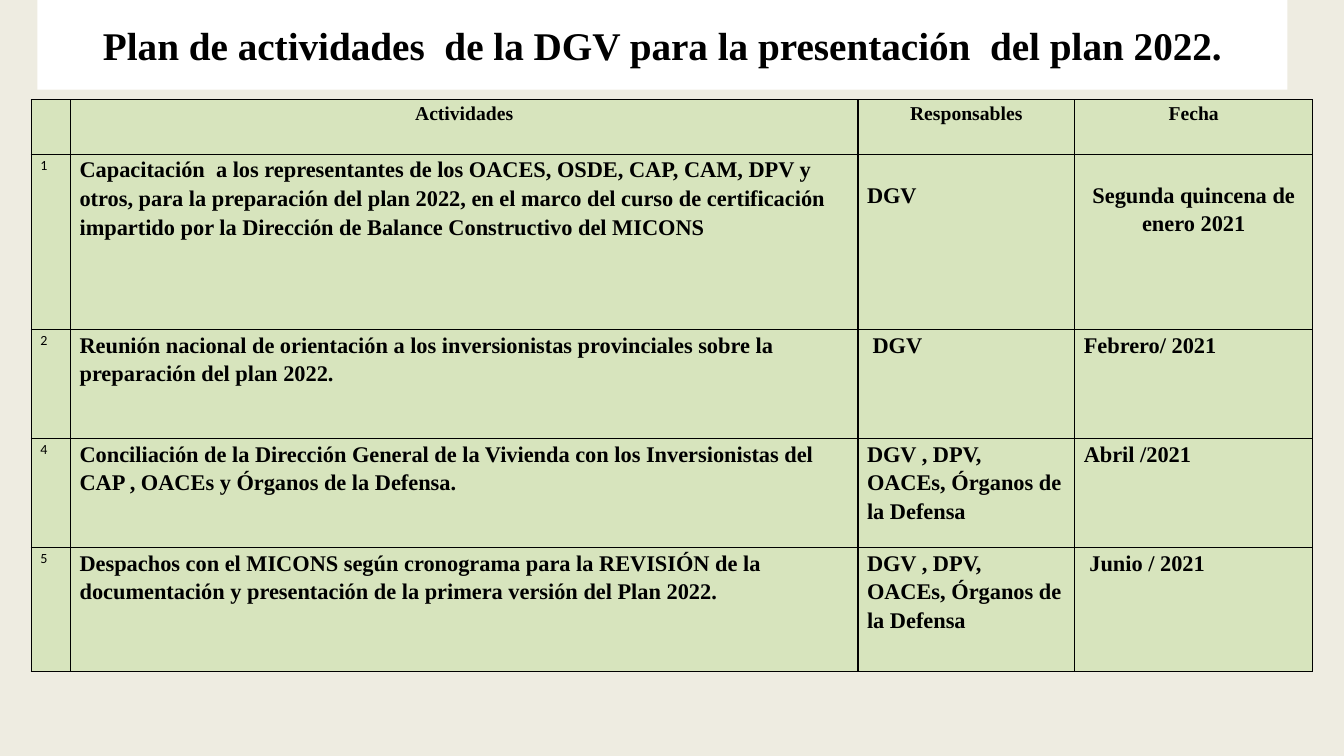
from lxml import etree
from pptx import Presentation
from pptx.dml.color import RGBColor
from pptx.enum.shapes import MSO_SHAPE
from pptx.enum.text import MSO_ANCHOR, PP_ALIGN
from pptx.oxml.ns import qn
from pptx.util import Inches, Pt

RECT = MSO_SHAPE.RECTANGLE
MIDDLE = MSO_ANCHOR.MIDDLE
LEFT, CENTER = PP_ALIGN.LEFT, PP_ALIGN.CENTER

COLORS = {"back": "EEECE1", "title": "FFFFFF", "cell": "D7E4BD", "ink": "000000"}
SERIF, SANS = "Times New Roman", "Calibri"
TITLE = "Plan de actividades  de la DGV para la presentación  del plan 2022."
COLS = [0.39, 7.81, 2.15, 2.36]
ROWS = [0.54, 1.74, 1.08, 1.08, 1.23]
PLAN = [
    ["", "Actividades", "Responsables", "Fecha"],
    ["1", "Capacitación  a los representantes de los OACES, OSDE, CAP, CAM, DPV y "
     "otros, para la preparación del plan 2022, en el marco del curso de certificación "
     "impartido por la Dirección de Balance Constructivo del MICONS",
     "DGV", "Segunda quincena de enero 2021"],
    ["2", "Reunión nacional de orientación a los inversionistas provinciales sobre la "
     "preparación del plan 2022.", " DGV", "Febrero/ 2021"],
    ["4", "Conciliación de la Dirección General de la Vivienda con los Inversionistas del "
     "CAP , OACEs y Órganos de la Defensa.",
     "DGV , DPV, OACEs, Órganos de la Defensa", "Abril /2021"],
    ["5", "Despachos con el MICONS según cronograma para la REVISIÓN de la "
     "documentación y presentación de la primera versión del Plan 2022.",
     "DGV , DPV, OACEs, Órganos de la Defensa", " Junio / 2021"],
]


class Deck:
    """Holds the style and the current slide."""

    def __init__(self):
        self.prs = Presentation()
        self.prs.slide_width, self.prs.slide_height = Inches(13.33), Inches(7.5)
        self.slide = self.prs.slides.add_slide(self.prs.slide_layouts[6])
        self.paint(self.slide.background.fill, "back")

    def paint(self, fill, name):
        fill.solid()
        fill.fore_color.rgb = RGBColor.from_string(COLORS[name])

    def label(self, frame, text, size, font=SERIF, bold=True, align=LEFT):
        para = frame.paragraphs[0]
        para.text = text
        para.alignment = align
        para.font.size, para.font.name, para.font.bold = Pt(size), font, bold
        para.font.color.rgb = RGBColor.from_string(COLORS["ink"])
        return para

    def title(self, text, *box):
        shape = self.slide.shapes.add_shape(RECT, *map(Inches, box))
        shape.shadow.inherit = False
        shape.line.fill.background()
        self.paint(shape.fill, "title")
        shape.text_frame.word_wrap = True
        shape.text_frame.vertical_anchor = MIDDLE
        self.label(shape.text_frame, text, 28, align=CENTER)

    def border(self, cell):
        props = cell._tc.get_or_add_tcPr()
        for side in ("lnL", "lnR", "lnT", "lnB"):
            line = etree.SubElement(props, qn(f"a:{side}"), w=str(Pt(1)))
            fill = etree.SubElement(line, qn("a:solidFill"))
            etree.SubElement(fill, qn("a:srgbClr"), val=COLORS["ink"])

    def cell(self, cell, text, top=0, **style):
        self.border(cell)
        self.paint(cell.fill, "cell")
        cell.margin_left = cell.margin_right = Inches(0.09)
        cell.margin_top, cell.margin_bottom = Inches(top), 0
        self.label(cell.text_frame, text, **style).line_spacing = 1.15

    def table(self, rows, left, top):
        box = map(Inches, (left, top, sum(COLS), sum(ROWS)))
        table = self.slide.shapes.add_table(len(ROWS), len(COLS), *box).table
        for col, width in zip(table.columns, COLS):
            col.width = Inches(width)
        for row, height in zip(table.rows, ROWS):
            row.height = Inches(height)
        for r, row in enumerate(rows):
            for c, text in enumerate(row):
                if r == 0:
                    style = {"size": 14, "align": CENTER}
                elif c == 0:
                    style = {"size": 10, "font": SANS, "bold": False}
                else:
                    style = {"size": 16}
                if r == 1 and c > 1:
                    style["top"] = 0.25
                    style["align"] = CENTER if c == 3 else LEFT
                self.cell(table.cell(r, c), text, **style)


def main():
    deck = Deck()
    deck.title(TITLE, 0.37, 0, 12.4, 0.89)
    deck.table(PLAN, 0.31, 0.99)
    deck.prs.save("out.pptx")


if __name__ == "__main__":
    main()
